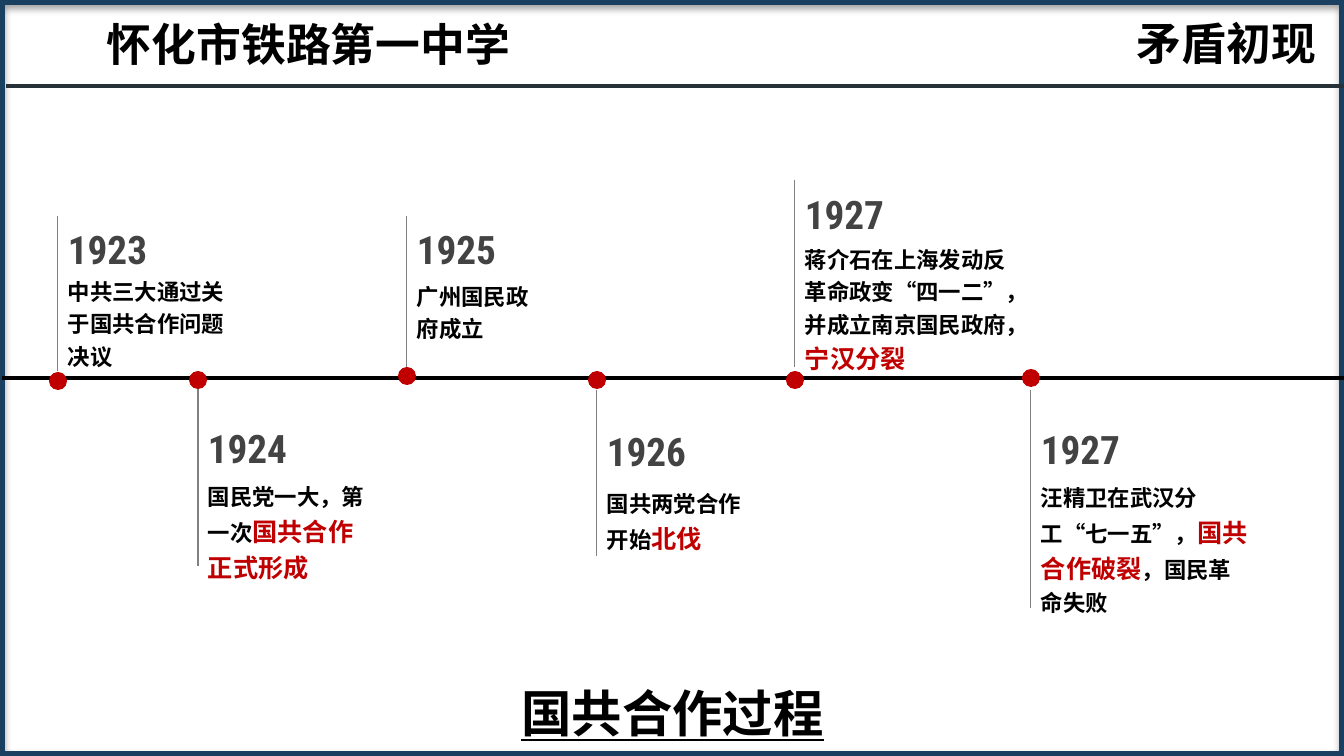
from lxml.etree import SubElement
from pptx import Presentation
from pptx.dml.color import RGBColor
from pptx.enum.shapes import MSO_CONNECTOR as CONN, MSO_SHAPE as SHAPE
from pptx.enum.text import MSO_AUTO_SIZE as FIT, PP_ALIGN as ALIGN
from pptx.oxml import parse_xml
from pptx.oxml.ns import nsdecls, qn
from pptx.util import Emu, Pt

W, H = 1344, 756
SCALE = 12192000 / W
RED, BLACK = "C00000", "000000"
DOT = 18

HEAD = {"name": "Noto Sans CJK SC", "size": Pt(32), "bold": True}
TITLE = {"name": "Noto Sans CJK JP", "size": Pt(36), "bold": True, "underline": True}
YEAR = {"name": "Roboto Condensed", "size": Pt(28), "bold": True}
BODY = {"name": "Noto Sans CJK SC", "size": Pt(16), "bold": True}
KEY = {**BODY, "size": Pt(18)}

# year, x, stem top and bottom, dot centre, year top, (text top, width, height), runs
EVENTS = [
    ("1923", 58, 216, 371, 381, 220, (268, 192, 108),
     [("中共三大通过关于国共合作问题决议", BODY, BLACK)]),
    ("1924", 198, 389, 566, 380, 419, (473, 190, 116),
     [("国民党一大，第一次", BODY, BLACK), ("国共合作正式形成", KEY, RED)]),
    ("1925", 407, 216, 371, 376, 220, (273, 142, 76),
     [("广州国民政府成立", BODY, BLACK)]),
    ("1926", 597, 390, 556, 380, 422, (480, 161, 80),
     [("国共两党合作开始", BODY, BLACK), ("北伐", KEY, RED)]),
    ("1927", 795, 180, 367, 380, 185, (236, 237, 144),
     [("蒋介石在上海发动反革命政变“四一二”，并成立南京国民政府，", BODY, BLACK),
      ("宁汉分裂", KEY, RED)]),
    ("1927", 1031, 390, 608, 378, 420, (474, 228, 148),
     [("汪精卫在武汉分工“七一五”，", BODY, BLACK), ("国共合作破裂", KEY, RED),
      ("，国民革命失败", BODY, BLACK)]),
]


def px(*values):
    return [Emu(round(v * SCALE)) for v in values]


def rgb(color):
    return RGBColor.from_string(color)


def add_text(s, box, runs, align=ALIGN.LEFT, spacing=None):
    tf = s.shapes.add_textbox(*px(*box)).text_frame
    tf.word_wrap = True
    tf.auto_size = FIT.SHAPE_TO_FIT_TEXT
    p = tf.paragraphs[0]
    p.alignment = align
    p.line_spacing = spacing
    for text, style, color in runs:
        r = p.add_run()
        r.text = text
        for key, value in style.items():
            setattr(r.font, key, value)
        r.font.color.rgb = rgb(color)
        SubElement(r.font._element, qn("a:ea"), typeface=style["name"])


def add_line(s, ends, color, width):
    line = s.shapes.add_connector(CONN.STRAIGHT, *px(*ends))
    line.line.color.rgb = rgb(color)
    line.line.width = Pt(width)
    SubElement(line._element.spPr, qn("a:effectLst"))


def add_frame(s, box):
    sp = s.shapes.add_shape(SHAPE.RECTANGLE, *px(*box))
    sp.fill.background()
    sp.line.color.rgb = rgb("193F61")
    sp.line.width = Pt(7)
    # Soft shadow below the border
    sp._element.spPr.append(parse_xml(
        f'<a:effectLst {nsdecls("a")}><a:outerShdw blurRad="{Pt(5.2)}" dist="{Pt(3)}" '
        'dir="5400000" rotWithShape="0"><a:srgbClr val="000000"><a:alpha val="40000"/>'
        '</a:srgbClr></a:outerShdw></a:effectLst>'))


def add_header(s, box):
    x, y, w, h = box
    add_line(s, (x + 6, y + h, x + w, y + h), "263238", 2.25)
    add_text(s, (x + 97, y + 12, 430, 64), [("怀化市铁路第一中学", HEAD, BLACK)])
    add_text(s, (x + w - 255, y + 11, 237, 64), [("矛盾初现", HEAD, BLACK)], ALIGN.RIGHT)


def add_event(s, year, x, top, bottom, dot_y, year_y, text_box, runs):
    text_y, w, h = text_box
    add_line(s, (x, top, x, bottom), "808080", 0.75)
    add_text(s, (x, year_y, 115, 57), [(year, YEAR, "444343")])
    add_text(s, (x, text_y, w, h), runs, spacing=1.2)
    dot = s.shapes.add_shape(SHAPE.OVAL, *px(x - DOT / 2, dot_y - DOT / 2, DOT, DOT))
    dot.shadow.inherit = False
    dot.fill.solid()
    dot.fill.fore_color.rgb = rgb(RED)
    dot.line.fill.background()


def add_timeline(s, box):
    x, y, w, h = box
    add_line(s, (x + 2, y + h // 2, x + w, y + h // 2), BLACK, 2.25)
    for event in EVENTS:
        add_event(s, *event)


def main():
    prs = Presentation()
    prs.slide_width, prs.slide_height = px(W, H)
    s = prs.slides.add_slide(prs.slide_layouts[6])
    add_frame(s, (0, 0, W, H))
    add_header(s, (0, 0, W, 86))
    add_timeline(s, (0, 0, W, H))
    # Slide title at the foot
    add_text(s, (497, 677, 351, 72), [("国共合作过程", TITLE, BLACK)], ALIGN.CENTER)
    prs.save("out.pptx")


if __name__ == "__main__":
    main()
